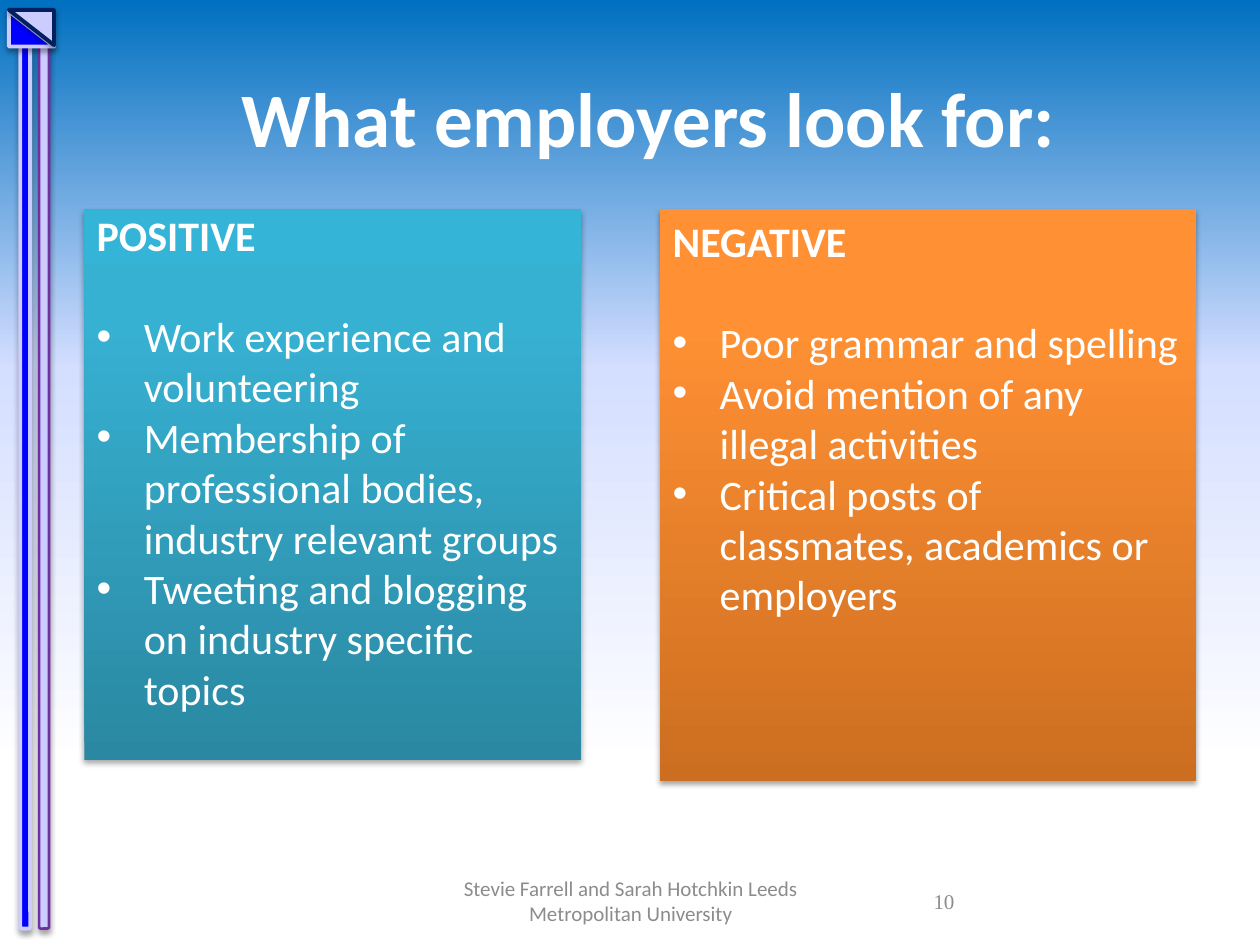
from lxml.etree import SubElement as Sub
from pptx import Presentation
from pptx.dml.color import RGBColor
from pptx.enum.shapes import MSO_SHAPE as Kind
from pptx.enum.text import MSO_ANCHOR as Anchor, PP_ALIGN as Align
from pptx.oxml import parse_xml
from pptx.oxml.ns import nsdecls, qn
from pptx.util import Cm, Pt

rgb = RGBColor.from_string


def blend(props, stops, angle):
    """Swap the solid fill for a linear gradient."""
    marks = "".join(
        f'<a:gs pos="{pos * 1000}"><a:srgbClr val="{tone}"/></a:gs>'
        for pos, tone in stops)
    props.replace(props.find(qn("a:solidFill")), parse_xml(
        f'<a:gradFill {nsdecls("a")} rotWithShape="1"><a:gsLst>{marks}</a:gsLst>'
        f'<a:lin ang="{angle * 60000}" scaled="0"/></a:gradFill>'))


def block(kind, box, fill, line=None, width=0):
    """Add a shape with a soft shadow below it."""
    shape = page.shapes.add_shape(kind, *map(Cm, box))
    shape.fill.solid()
    shape.fill.fore_color.rgb = rgb(fill)
    if line:
        shape.line.color.rgb = rgb(line)
        shape.line.width = Pt(width)
    else:
        shape.line.fill.background()
    shape.shadow.inherit = False
    glow = shape.element.spPr.find(qn("a:effectLst"))
    glow.append(parse_xml(
        f'<a:outerShdw {nsdecls("a")} blurRad="{Pt(3.1)}" dist="{Pt(1.8)}" '
        'dir="5400000" rotWithShape="0"><a:srgbClr val="000000">'
        '<a:alpha val="35000"/></a:srgbClr></a:outerShdw>'))
    return shape


deck = Presentation()
deck.slide_width, deck.slide_height = Cm(25.4), Cm(19.05)
page = deck.slides.add_slide(deck.slide_layouts[6])

# Background
page.background.fill.solid()
blend(page.element.find(".//" + qn("p:bgPr")),
      [(0, "0070C0"), (39, "D4DEFF"), (81, "FFFFFF"), (99, "FFFFFF")], 90)

# Bars down the left edge
for left, fill, line, width in [(0.41, "0000FF", "CCCCFF", 2.25),
                                (0.79, "CCCCFF", "7030A0", 1.5)]:
    block(Kind.ROUNDED_RECTANGLE, (left, 0.71, 0.2, 18.01), fill, line, width)

# Two triangles that form the corner badge
for top, fill, line, flip in [(0.13, "0000FF", "CCCCFF", "flipV"),
                              (0.1, "CCCCFF", "002060", "flipH")]:
    half = block(Kind.RIGHT_TRIANGLE, (0.28, top, 0.71, 0.91), fill, line, 2.25)
    half.rotation = 270
    half.element.spPr.xfrm.set(flip, "1")

# Title, footer and page number
for text, box, size, face, tone, bold, align in [
    ("What employers look for:", (1.65, 0.76, 22.86, 3.18),
     44, "Calibri", "FFFFFF", True, Align.CENTER),
    ("Stevie Farrell and Sarah Hotchkin Leeds Metropolitan University",
     (8.69, 17.65, 8.05, 1.02), 12, "Calibri", "8C8C8C", False, Align.CENTER),
    ("10", (18.57, 17.65, 5.92, 1.02),
     12, "Times New Roman", "8C8C8C", False, Align.LEFT),
]:
    frame = page.shapes.add_textbox(*map(Cm, box)).text_frame
    frame.word_wrap = True
    frame.vertical_anchor = Anchor.MIDDLE
    para = frame.paragraphs[0]
    para.text, para.alignment = text, align
    font = para.font
    font.size, font.name, font.bold = Pt(size), face, bold
    font.color.rgb = rgb(tone)

# Cards with a heading and bullets
for box, inset, tones, lines in [
    ((1.7, 4.22, 10.01, 11.1), 0, ("2A88A2", "37B1D2", "34B4D6"),
     ["POSITIVE",
      "Work experience and volunteering",
      "Membership of professional bodies, industry relevant groups",
      "Tweeting and blogging on industry specific topics"]),
    ((13.31, 4.22, 10.8, 11.53), 0.13, ("CC6E20", "FF9034", "FF9136"),
     ["NEGATIVE",
      "Poor grammar and spelling",
      "Avoid mention of any illegal activities",
      "Critical posts of classmates, academics or employers"]),
]:
    card = block(Kind.RECTANGLE, box, tones[0])
    blend(card.element.spPr, zip((0, 80, 100), tones), 270)
    frame = card.text_frame
    frame.word_wrap = True
    frame.vertical_anchor = Anchor.TOP
    frame.margin_top = Cm(inset)
    for row, text in enumerate(lines):
        para = frame.add_paragraph() if row else frame.paragraphs[0]
        para.text, para.alignment = text, Align.LEFT
        if row:
            props = para._p.get_or_add_pPr()
            props.set("marL", str(Cm(0.95)))
            props.set("indent", str(-Cm(0.95)))
            Sub(props, qn("a:buFont")).set("typeface", "Arial")
            Sub(props, qn("a:buChar")).set("char", "•")
        else:
            para.space_after = Pt(29)
        font = para.font
        font.size, font.name, font.bold = Pt(24), "Calibri", row == 0
        font.color.rgb = rgb("FFFFFF")

deck.save("out.pptx")
